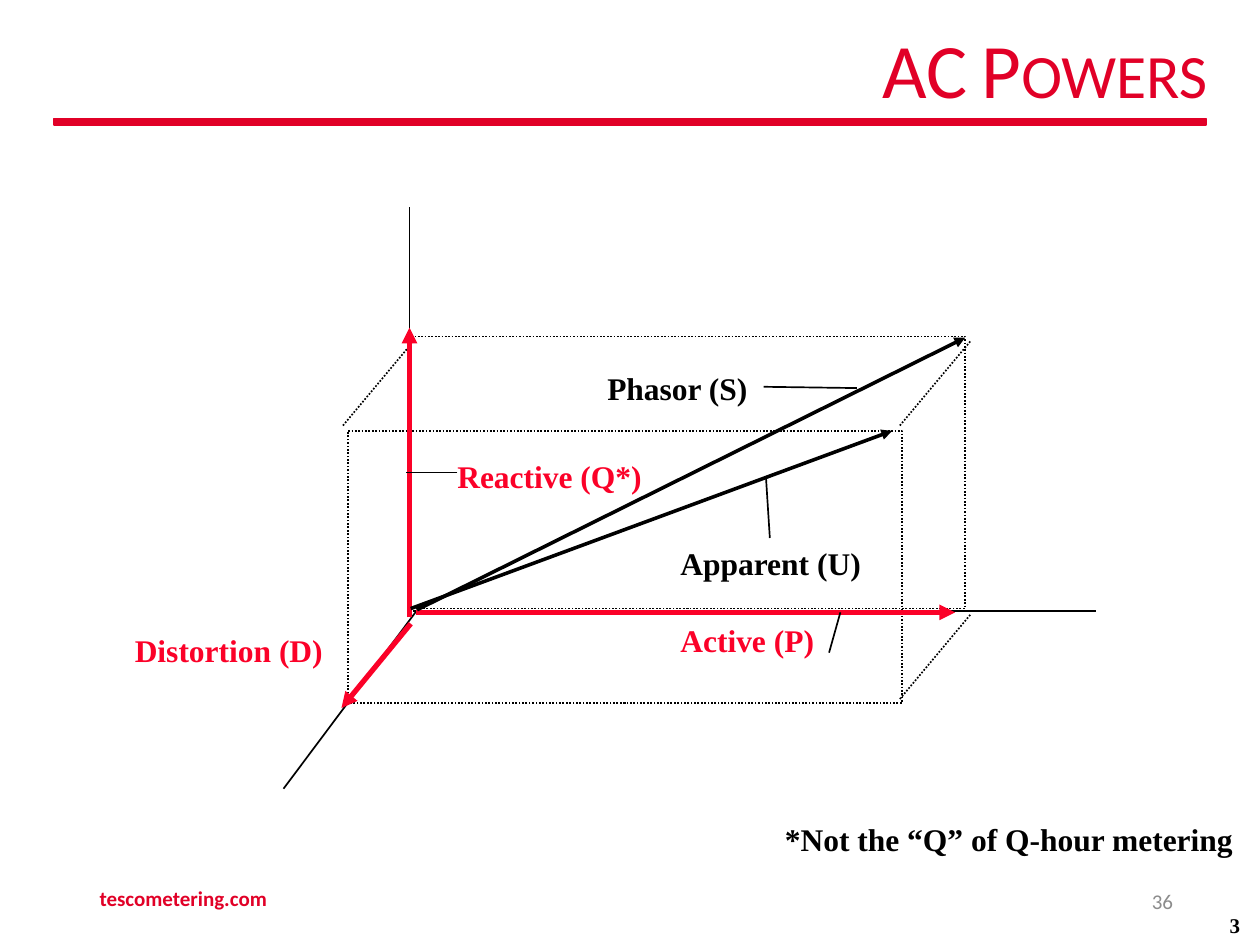
import pptx
import pptx.util
import pptx.dml.color
import pptx.enum.dml
import pptx.enum.shapes
import pptx.enum.text
import pptx.oxml.ns
import lxml.etree

Inches, Pt = pptx.util.Inches, pptx.util.Pt
Align, Anchor = pptx.enum.text.PP_ALIGN, pptx.enum.text.MSO_ANCHOR
Shape = pptx.enum.shapes.MSO_SHAPE
DOTS = pptx.enum.dml.MSO_LINE.ROUND_DOT
qn = pptx.oxml.ns.qn

BRAND = pptx.dml.color.RGBColor(0xE1, 0x00, 0x27)
RED = pptx.dml.color.RGBColor(0xFB, 0x01, 0x28)
BLACK = pptx.dml.color.RGBColor(0, 0, 0)
GRAY = pptx.dml.color.RGBColor(0x8C, 0x8C, 0x8C)
THIN = 0.96

deck = pptx.Presentation()
deck.slide_width, deck.slide_height = Inches(10), Inches(7.5)
slide = deck.slides.add_slide(deck.slide_layouts[5])


def write(box, lines, size=18, face="Times New Roman", bold=True,
          align=Align.LEFT, anchor=Anchor.TOP, gap=0):
    """Fill a box with lines of (text, color, indent)."""
    frame = box.text_frame
    look = dict(word_wrap=True, auto_size=pptx.enum.text.MSO_AUTO_SIZE.NONE,
                vertical_anchor=anchor, margin_left=0, margin_right=0,
                margin_top=0, margin_bottom=0)
    for key, value in look.items():
        setattr(frame, key, value)
    for i, (text, color, indent) in enumerate(lines):
        para = frame.paragraphs[0] if i == 0 else frame.add_paragraph()
        para.alignment = align
        if i:
            para.space_before = Pt(gap)
        if indent:
            para._p.get_or_add_pPr().set("marL", str(Inches(indent)))
        run = para.add_run()
        run.text = text
        for key, value in dict(name=face, size=Pt(size), bold=bold).items():
            setattr(run.font, key, value)
        run.font.color.rgb = color


def draw(x1, y1, x2, y2, color=BLACK, width=THIN, dots=False, arrow=False):
    """Draw a line, dotted or with an arrowhead at its end."""
    line = slide.shapes.add_connector(
        pptx.enum.shapes.MSO_CONNECTOR.STRAIGHT,
        Inches(x1), Inches(y1), Inches(x2), Inches(y2))
    line.line.color.rgb = color
    line.line.width = Pt(width)
    if dots:
        line.line.dash_style = DOTS
    if arrow:
        tip = lxml.etree.SubElement(line.line._get_or_add_ln(), qn("a:tailEnd"))
        tip.set("type", "triangle")
    lxml.etree.SubElement(line._element.spPr, qn("a:effectLst"))


# Title and rule
title = slide.shapes.title
spot = dict(left=1.7, top=0.15, width=7.88, height=0.78)
for key, value in spot.items():
    setattr(title, key, Inches(value))
write(title, [("AC Powers", BRAND, 0)], size=44, face="Calibri", bold=False,
      align=Align.RIGHT, anchor=Anchor.MIDDLE)
title.text_frame.paragraphs[0].runs[0].font._element.set("cap", "small")

rule = slide.shapes.add_shape(Shape.RECTANGLE, Inches(0.43), Inches(0.94),
                              Inches(9.14), Inches(0.05))
rule.shadow.inherit = False
rule.fill.solid()
rule.fill.fore_color.rgb = BRAND
rule.line.color.rgb = BRAND
rule.line.width = Pt(1)

# Back and front faces of the power box
for x, y in [(3.26, 2.67), (2.76, 3.42)]:
    face = slide.shapes.add_shape(Shape.RECTANGLE, Inches(x), Inches(y),
                                  Inches(4.4), Inches(2.16))
    face.shadow.inherit = False
    face.fill.background()
    face.line.color.rgb = BLACK
    face.line.width = Pt(THIN)
    face.line.dash_style = DOTS

# Axes
for ends in [(3.25, 4.86, 3.25, 1.64), (3.28, 4.85, 8.7, 4.85),
             (3.32, 4.83, 2.25, 6.26)]:
    draw(*ends)

# Slanted edges
for x, y in [(3.28, 2.71), (7.7, 2.71), (7.7, 4.88)]:
    draw(x, y, x - 0.56, y + 0.67, dots=True)

# Power vectors: reactive, active, distortion, phasor, apparent
for ends in [(3.25, 4.9, 3.25, 2.6), (3.3, 4.86, 7.58, 4.86),
             (3.26, 4.95, 2.71, 5.62)]:
    draw(*ends, color=RED, width=3, arrow=True)
for ends in [(3.31, 4.84, 7.66, 2.68), (3.26, 4.83, 7.08, 3.42)]:
    draw(*ends, width=2.04, arrow=True)

# Leader lines
for ends in [(6.06, 3.07, 6.8, 3.08), (6.11, 4.27, 6.08, 3.8),
             (3.63, 3.75, 3.22, 3.75), (6.58, 5.18, 6.67, 4.86)]:
    draw(*ends)

# Labels, note and footer
foot = dict(size=12, face="Calibri", anchor=Anchor.MIDDLE)
vectors = [("Phasor (S)", BLACK, 1.2), ("Reactive (Q*)", RED, 0.01),
           ("Apparent (U)", BLACK, 1.78)]
for place, lines, look in [
    ((3.62, 2.93, 3.3, 1.66), vectors, dict(gap=28.4)),
    ((1.07, 5.01, 1.6, 0.33), [("Distortion (D)", RED, 0)], {}),
    ((5.4, 4.93, 1.15, 0.33), [("Active (P)", RED, 0)], {}),
    ((6.23, 6.51, 3.7, 0.33),
     [("*Not the “Q” of Q-hour metering", BLACK, 0)], {}),
    ((0.79, 6.93, 3.18, 0.4), [("tescometering.com", BRAND, 0)], foot),
    ((7.06, 6.95, 2.25, 0.4), [("36", GRAY, 0)],
     dict(foot, bold=False, align=Align.RIGHT)),
    ((9.76, 7.24, 0.15, 0.21), [("3", BLACK, 0)], dict(size=12)),
]:
    box = slide.shapes.add_textbox(*map(Inches, place))
    write(box, lines, **look)

deck.save("out.pptx")
